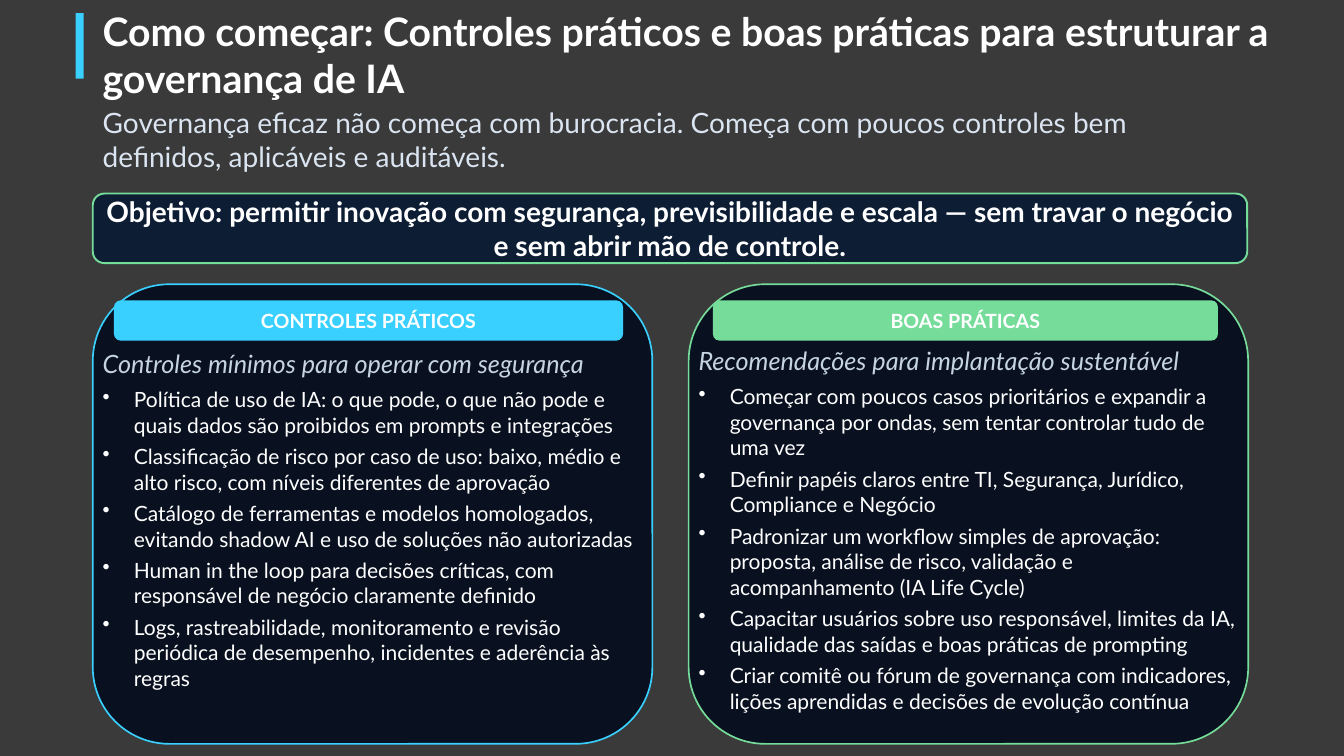
"""Build the slide on practical controls and good practices for AI governance."""
from lxml import etree
from pptx import Presentation
from pptx.dml.color import RGBColor
from pptx.enum.shapes import MSO_SHAPE
from pptx.enum.text import MSO_ANCHOR, PP_ALIGN
from pptx.oxml.ns import qn
from pptx.util import Inches, Pt

RECT = MSO_SHAPE.RECTANGLE
ROUND = MSO_SHAPE.ROUNDED_RECTANGLE
TOP = MSO_ANCHOR.TOP
MIDDLE = MSO_ANCHOR.MIDDLE
LEFT = PP_ALIGN.LEFT
CENTER = PP_ALIGN.CENTER

GRAY = RGBColor(0x3A, 0x3A, 0x3A)
WHITE = RGBColor(0xFF, 0xFF, 0xFF)
PALE = RGBColor(0xDB, 0xE5, 0xF1)
MIST = RGBColor(0xC6, 0xD4, 0xE2)
NAVY = RGBColor(0x0D, 0x1D, 0x34)
NIGHT = RGBColor(0x09, 0x11, 0x20)
CYAN = RGBColor(0x39, 0xD0, 0xFF)
GREEN = RGBColor(0x76, 0xDC, 0x9A)

prs = Presentation()
prs.slide_width = Inches(13.33)
prs.slide_height = Inches(7.5)
slide = prs.slides.add_slide(prs.slide_layouts[6])
slide.background.fill.solid()
slide.background.fill.fore_color.rgb = GRAY


def add_box(kind, x, y, w, h, fill, line=None, width=1.2):
    box = slide.shapes.add_shape(kind, Inches(x), Inches(y), Inches(w), Inches(h))
    box.shadow.inherit = False
    box.fill.solid()
    box.fill.fore_color.rgb = fill
    if line is None:
        box.line.fill.background()
    else:
        box.line.color.rgb = line
        box.line.width = Pt(width)
    return box


def write(box, lines, size, color=WHITE, bold=False, italic=False,
          align=LEFT, anchor=TOP, bullet=False):
    frame = box.text_frame
    frame.word_wrap = True
    frame.vertical_anchor = anchor
    for i, line in enumerate(lines):
        para = frame.paragraphs[0] if i == 0 else frame.add_paragraph()
        para.text = line
        para.alignment = align
        if bullet:
            props = para._p.get_or_add_pPr()
            props.set("marL", str(Inches(0.31)))
            props.set("indent", str(Inches(-0.31)))
            etree.SubElement(props, qn("a:buChar"), char="•")
            para.line_spacing = 1.02
            para.space_after = Pt(4)
        font = para.font
        font.name = "Lato"
        font.size = Pt(size)
        font.bold = bold
        font.italic = italic
        font.color.rgb = color


add_box(RECT, 0.75, 0.13, 0.08, 0.65, CYAN)
title = slide.shapes.add_textbox(Inches(0.92), Inches(0.02), Inches(12.01), Inches(1.04))
write(title, ["Como começar: Controles práticos e boas práticas para estruturar a governança de IA"],
      28, bold=True)
lead = slide.shapes.add_textbox(Inches(0.92), Inches(1), Inches(10.9), Inches(0.77))
write(lead, ["Governança eficaz não começa com burocracia. Começa com poucos controles bem "
             "definidos, aplicáveis e auditáveis."], 20, PALE)
goal = add_box(ROUND, 0.92, 1.92, 11.45, 0.69, NAVY, GREEN, 1.35)
write(goal, ["Objetivo: permitir inovação com segurança, previsibilidade e escala — sem travar "
             "o negócio e sem abrir mão de controle."],
      20, bold=True, align=CENTER, anchor=MIDDLE)

cards = [
    (0.92, 0.21, 5.05, 3.41, CYAN, "CONTROLES PRÁTICOS",
     "Controles mínimos para operar com segurança", [
         "Política de uso de IA: o que pode, o que não pode e quais dados são proibidos "
         "em prompts e integrações",
         "Classificação de risco por caso de uso: baixo, médio e alto risco, com níveis "
         "diferentes de aprovação",
         "Catálogo de ferramentas e modelos homologados, evitando shadow AI e uso de "
         "soluções não autorizadas",
         "Human in the loop para decisões críticas, com responsável de negócio "
         "claramente definido",
         "Logs, rastreabilidade, monitoramento e revisão periódica de desempenho, "
         "incidentes e aderência às regras",
     ]),
    (6.83, 0.24, 5.01, 3.38, GREEN, "BOAS PRÁTICAS",
     "Recomendações para implantação sustentável", [
         "Começar com poucos casos prioritários e expandir a governança por ondas, sem "
         "tentar controlar tudo de uma vez",
         "Definir papéis claros entre TI, Segurança, Jurídico, Compliance e Negócio",
         "Padronizar um workflow simples de aprovação: proposta, análise de risco, "
         "validação e acompanhamento (IA Life Cycle)",
         "Capacitar usuários sobre uso responsável, limites da IA, qualidade das saídas "
         "e boas práticas de prompting",
         "Criar comitê ou fórum de governança com indicadores, lições aprendidas e "
         "decisões de evolução contínua",
     ]),
]
for x, inset, wide, y, color, head, intro, items in cards:
    add_box(ROUND, x, 2.82, 5.55, 4.56, NIGHT, color)
    label = add_box(ROUND, x + inset, 2.98, wide, 0.4, color)
    write(label, [head], 14, bold=True, align=CENTER, anchor=MIDDLE)
    note = slide.shapes.add_textbox(Inches(x), Inches(y), Inches(5.75), Inches(0.4))
    write(note, [intro], 18, MIST, italic=True)
    body = slide.shapes.add_textbox(Inches(x), Inches(y + 0.37), Inches(5.54), Inches(3.41))
    write(body, items, 15, bullet=True)

prs.save("out.pptx")
